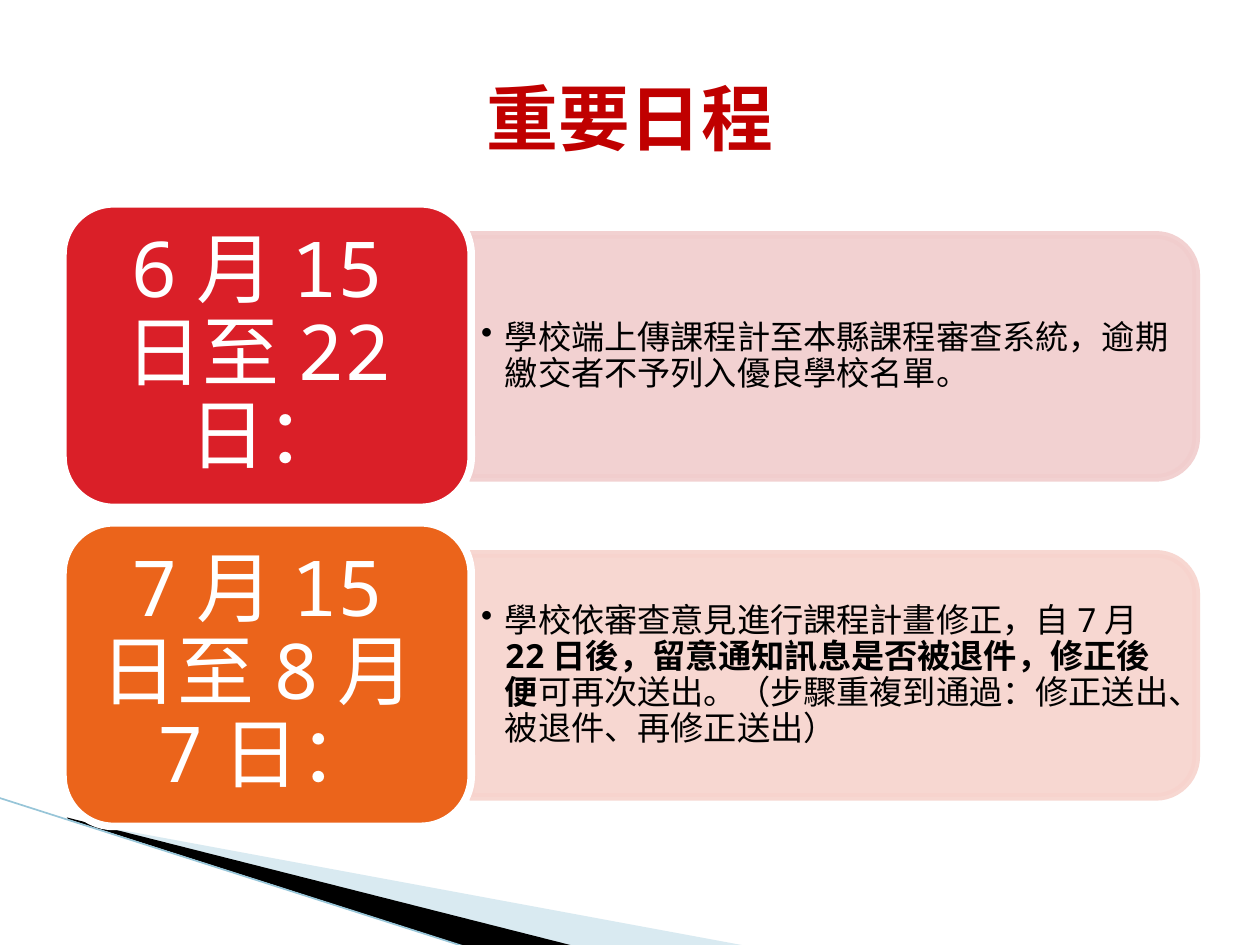
from lxml import etree
from pptx import Presentation
from pptx.dml.color import RGBColor
from pptx.enum.shapes import MSO_CONNECTOR, MSO_SHAPE
from pptx.enum.text import MSO_ANCHOR, PP_ALIGN
from pptx.oxml.ns import qn
from pptx.util import Cm, Pt

CENTER, MIDDLE = PP_ALIGN.CENTER, MSO_ANCHOR.MIDDLE
COLORS = {
    "title": "C00000", "black": "000000", "white": "FFFFFF",
    "wedge": "A0CBDC", "edge": "97C5D8",
    "red": "DA1F28", "red tint": "F1CDCD",
    "orange": "EB641B", "orange tint": "F7D3CD",
}
BODY_FONT = "Noto Sans Mono"


def paint(fill, color, opacity=100):
    """Give a fill a solid colour with an opacity in percent."""
    fill.solid()
    fill.fore_color.rgb = RGBColor.from_string(COLORS[color])
    if opacity < 100:
        tint = fill._xPr.find(qn("a:solidFill"))[0]
        etree.SubElement(tint, qn("a:alpha"), val=str(opacity * 1000))


def write(frame, runs, size, color, font, margins):
    """Fill the first paragraph with (text, bold) runs and return it."""
    frame.word_wrap = True
    frame.vertical_anchor = MIDDLE
    frame.margin_left = frame.margin_right = Cm(margins[0])
    frame.margin_top = frame.margin_bottom = Cm(margins[1])
    para = frame.paragraphs[0]
    for text, bold in runs:
        span = para.add_run()
        span.text = text
        span.font.name = font
        span.font.size = Pt(size)
        span.font.bold = bold
        span.font.color.rgb = RGBColor.from_string(COLORS[color])
    return para


deck = Presentation()
deck.slide_width, deck.slide_height = Cm(25.4), Cm(19.05)
page = deck.slides.add_slide(deck.slide_layouts[5])

# Corner decoration
wedges = [
    ("wedge", 40, [(1.4, 16.54), (15.11, 19.08), (11.58, 19.08), (1.4, 16.51)]),
    ("black", 100, [(1.35, 16.48), (11.61, 19.08), (9.45, 19.1), (1.37, 16.51)]),
]
for color, opacity, corners in wedges:
    points = [(Cm(x), Cm(y)) for x, y in corners]
    outline = page.shapes.build_freeform(*points[0])
    outline.add_line_segments(points[1:], close=True)
    wedge = outline.convert_to_shape()
    wedge.shadow.inherit = False
    paint(wedge.fill, color, opacity)
    wedge.line.fill.background()

edge = page.shapes.add_connector(
    MSO_CONNECTOR.STRAIGHT, Cm(-0.03), Cm(16.08), Cm(9.42), Cm(19.1))
paint(edge.line.fill, "edge")
edge.line.width = Pt(0.95)
etree.SubElement(edge._element.spPr, qn("a:effectLst"))

# Schedule: a date card in front of a panel, one pair per row
schedule = [
    ("6月15日至22日：", "red", [
        ("學校端上傳課程計至本縣課程審查系統，逾期繳交者不予列入優良學校名單。", False)]),
    ("7月15日至8月7日：", "orange", [
        ("學校依審查意見進行課程計畫修正，自7月", False),
        ("22日後，留意通知訊息是否被退件，修正後便", True),
        ("可再次送出。（步驟重複到通過：修正送出、被退件、再修正送出）", False)]),
]
ROW_PITCH = 6.43
for row, (date, color, details) in enumerate(schedule):
    offset = row * ROW_PITCH

    panel = page.shapes.add_shape(
        MSO_SHAPE.ROUND_2_SAME_RECTANGLE,
        Cm(14.35), Cm(-0.13 + offset), Cm(4.9), Cm(14.63))
    panel.rotation = 90
    panel.shadow.inherit = False
    paint(panel.fill, color + " tint", 90)
    paint(panel.line.fill, color + " tint", 90)
    panel.line.width = Pt(4.33)

    box = page.shapes.add_textbox(
        Cm(9.5), Cm(4.98 + offset), Cm(14.4), Cm(4.42))
    para = write(box.text_frame, details, 19, "black", BODY_FONT, (0.2, 0.1))
    para.level = 1
    para.line_spacing = 0.9
    properties = para._p.get_or_add_pPr()
    properties.set("marL", str(Cm(0.48)))
    properties.set("indent", str(Cm(-0.48)))
    etree.SubElement(properties, qn("a:buChar"), char="•")

    card = page.shapes.add_shape(
        MSO_SHAPE.ROUNDED_RECTANGLE,
        Cm(1.27), Cm(4.11 + offset), Cm(8.23), Cm(6.12))
    card.shadow.inherit = False
    paint(card.fill, color)
    paint(card.line.fill, "white")
    card.line.width = Pt(4.33)
    para = write(card.text_frame, [(date, False)], 44, "white", BODY_FONT,
                 (0.46, 0.23))
    para.alignment = CENTER
    para.line_spacing = 0.9

title = page.shapes.title
title.left, title.top, title.width, title.height = Cm(1.27), Cm(0.76), Cm(22.86), Cm(3.18)
para = write(title.text_frame, [("重要日程", True)], 41, "title",
             "Times New Roman", (0.25, 0.13))
para.alignment = CENTER

deck.save("out.pptx")
